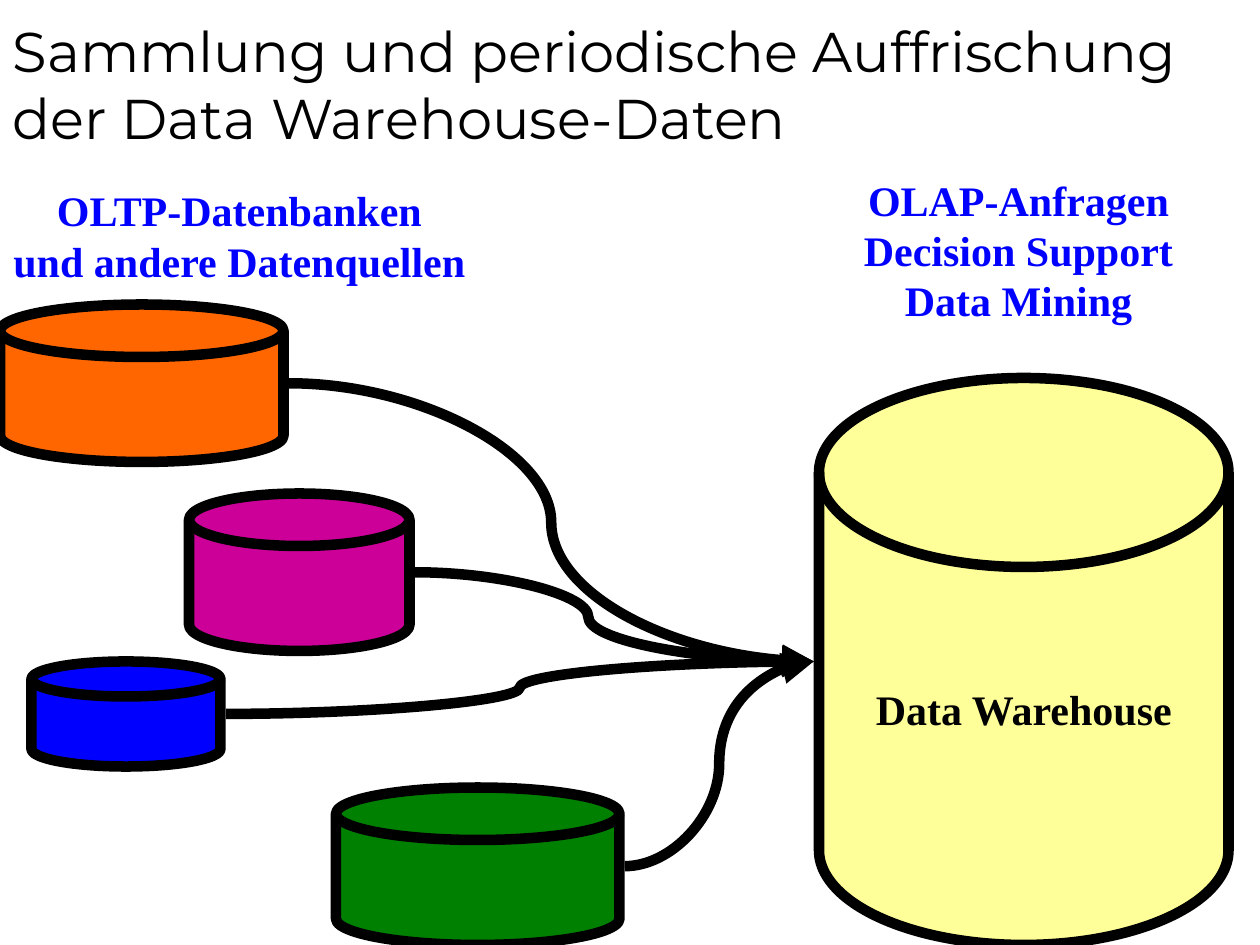
from dataclasses import dataclass

import pptx
import pptx.dml.color
import pptx.enum.shapes
import pptx.enum.text
import pptx.oxml
import pptx.oxml.ns
import pptx.util

COLORS = {
    "black": "000000",
    "orange": "FF6600",
    "magenta": "CC0099",
    "green": "008000",
    "blue": "0000FF",
    "yellow": "FFFF99",
}
SERIF = "Times New Roman"
LINE_WIDTH = pptx.util.Pt(6)
CELL = pptx.util.Inches(1) / 12  # the grid has 120 columns and 90 rows
GAP = 0.5  # cells between a cylinder's side and its curve

ALIGN = pptx.enum.text.PP_ALIGN
ANCHOR = pptx.enum.text.MSO_ANCHOR


@dataclass
class Cylinder:
    column: float
    row: float
    columns: float
    rows: float
    color: str
    bend: float = 0.5  # share of the curve's width at which it turns

    @property
    def middle(self) -> float:
        return self.row + self.rows / 2


@dataclass
class Caption:
    column: float
    row: float
    columns: float
    rows: float
    lines: list[str]


SOURCES = [
    Cylinder(0, 29, 27, 15, "orange"),
    Cylinder(18, 47, 21, 15, "magenta", bend=0.435),
    Cylinder(32, 75, 27, 15, "green"),
    Cylinder(3, 63, 18, 10, "blue"),
]
WAREHOUSE = Cylinder(78, 36, 39, 54, "yellow")
CAPTIONS = [
    Caption(0, 17, 45.6, 10.8, ["OLTP-Datenbanken", "und andere Datenquellen"]),
    Caption(81, 16, 32, 15.6, ["OLAP-Anfragen", "Decision Support", "Data Mining"]),
]


def cells(*counts: float) -> list[pptx.util.Emu]:
    return [pptx.util.Emu(round(count * CELL)) for count in counts]


def rgb(name: str) -> pptx.dml.color.RGBColor:
    return pptx.dml.color.RGBColor.from_string(COLORS[name])


def write_text(shape, lines: list[str], *, font=SERIF, size=24, color="black", bold=True,
               align=ALIGN.CENTER, anchor=ANCHOR.MIDDLE, wrap=False, spacing=None,
               auto_size=pptx.enum.text.MSO_AUTO_SIZE.NONE) -> None:
    frame = shape.text_frame
    frame.auto_size = auto_size
    frame.word_wrap = wrap
    frame.vertical_anchor = anchor
    for index, line in enumerate(lines):
        paragraph = frame.add_paragraph() if index else frame.paragraphs[0]
        paragraph.alignment = align
        paragraph.line_spacing = spacing
        run = paragraph.add_run()
        run.text = line
        run.font.name = font
        run.font.size = pptx.util.Pt(size)
        run.font.bold = bold
        run.font.color.rgb = rgb(color)


def draw_cylinder(slide, cylinder: Cylinder):
    shape = slide.shapes.add_shape(
        pptx.enum.shapes.MSO_SHAPE.FLOWCHART_MAGNETIC_DISK,
        *cells(cylinder.column, cylinder.row, cylinder.columns, cylinder.rows))
    shape.shadow.inherit = False
    shape.fill.solid()
    shape.fill.fore_color.rgb = rgb(cylinder.color)
    shape.line.color.rgb = rgb("black")
    shape.line.width = LINE_WIDTH
    return shape


def draw_caption(slide, caption: Caption) -> None:
    box = slide.shapes.add_textbox(
        *cells(caption.column, caption.row, caption.columns, caption.rows))
    write_text(box, caption.lines, color="blue", anchor=ANCHOR.TOP,
               spacing=pptx.util.Pt(28.8),
               auto_size=pptx.enum.text.MSO_AUTO_SIZE.SHAPE_TO_FIT_TEXT)


def draw_flow(slide, source: Cylinder, target: Cylinder) -> None:
    connector = slide.shapes.add_connector(
        pptx.enum.shapes.MSO_CONNECTOR.CURVE,
        *cells(source.column + source.columns + GAP, source.middle,
               target.column - GAP, target.middle))
    connector.line.color.rgb = rgb("black")
    connector.line.width = LINE_WIDTH
    qn = pptx.oxml.ns.qn
    properties = connector._element.spPr
    # Turning point of the curve
    guides = properties.find(qn("a:prstGeom")).get_or_add_avLst()
    guide = guides.makeelement(
        qn("a:gd"), {"name": "adj1", "fmla": f"val {round(source.bend * 100000)}"})
    guides.append(guide)
    # Arrowhead, and no shadow
    line = properties.find(qn("a:ln"))
    line.append(line.makeelement(qn("a:tailEnd"), {"type": "triangle"}))
    properties.append(properties.makeelement(qn("a:effectLst"), {}))


def main() -> None:
    presentation = pptx.Presentation()
    presentation.slide_width, presentation.slide_height = cells(120, 90)
    slide = presentation.slides.add_slide(presentation.slide_layouts.get_by_name("Title Only"))

    # Title
    title = slide.shapes.title
    title.left, title.top, title.width, title.height = cells(0, 0, 120, 15)
    write_text(title, ["Sammlung und periodische Auffrischung der Data Warehouse-Daten"],
               font="Montserrat", size=32, bold=False, align=ALIGN.LEFT,
               anchor=ANCHOR.BOTTOM, wrap=True)

    # Data sources and warehouse
    for source in SOURCES:
        draw_cylinder(slide, source)
    write_text(draw_cylinder(slide, WAREHOUSE), ["Data Warehouse"])

    # Captions
    for caption in CAPTIONS:
        draw_caption(slide, caption)

    # Flows into the warehouse
    for source in SOURCES:
        draw_flow(slide, source, WAREHOUSE)

    presentation.save("out.pptx")


if __name__ == "__main__":
    main()
